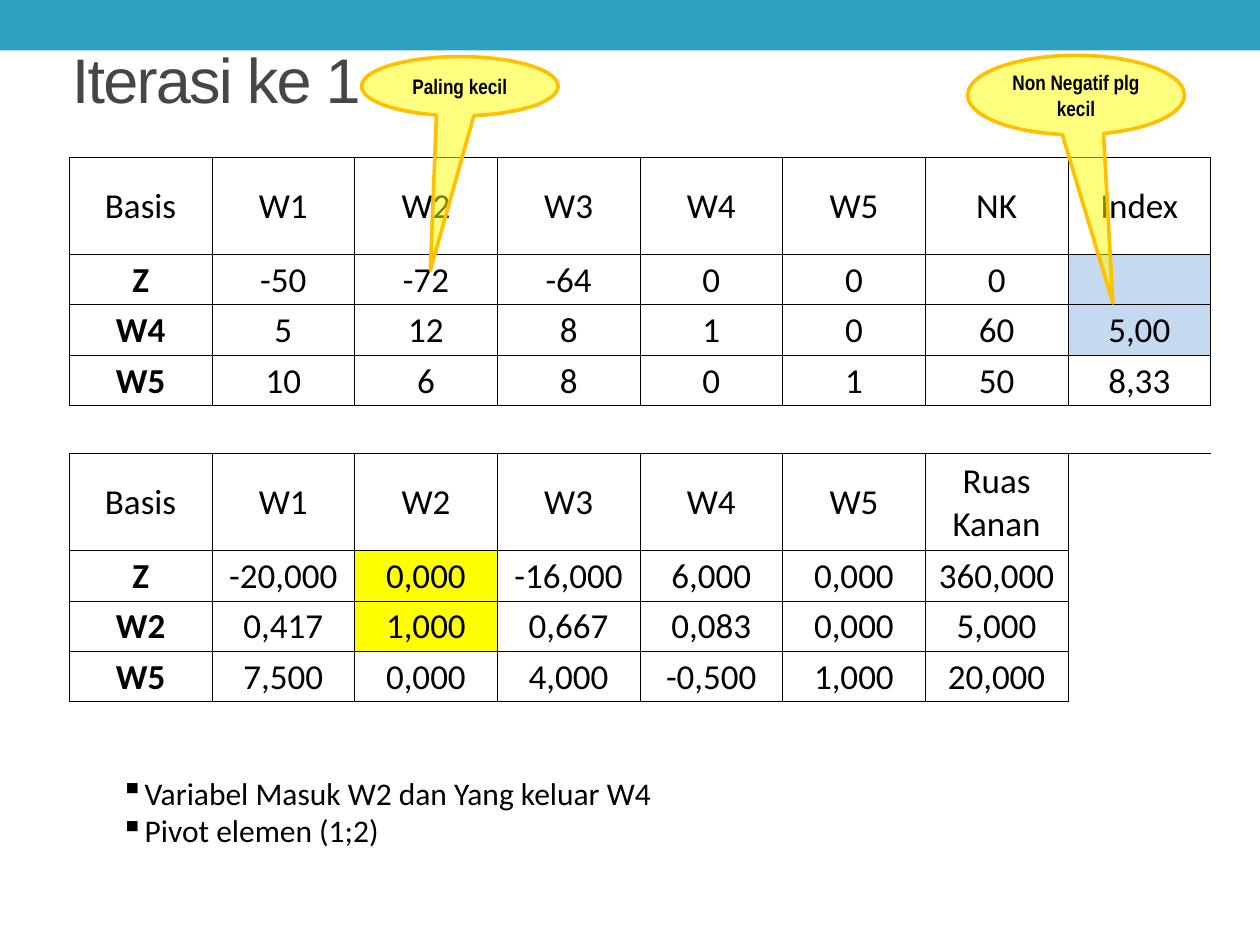
from lxml.etree import SubElement
from pptx import Presentation
from pptx.dml.color import RGBColor
from pptx.enum.shapes import MSO_SHAPE
from pptx.enum.text import MSO_ANCHOR, MSO_AUTO_SIZE, PP_ALIGN
from pptx.oxml.ns import qn
from pptx.util import Inches, Pt

BLACK, BAR, YELLOW, ORANGE, BLUE = "000000", "2DA2BF", "FFFF00", "FFC000", "C5D9F1"
NO_STYLE = "{2D5ABB26-0587-4C30-8999-92F81FD0307C}"
GAP_ROW, INDEX_COL = 4, 7
HEIGHTS = [0.77, 0.4, 0.4, 0.4, 0.38, 0.77, 0.4, 0.4, 0.4]
ROWS = [
    ["Basis", "W1", "W2", "W3", "W4", "W5", "NK", "Index"],
    ["Z", "-50", "-72", "-64", "0", "0", "0", ""],
    ["W4", "5", "12", "8", "1", "0", "60", "5,00"],
    ["W5", "10", "6", "8", "0", "1", "50", "8,33"],
    [""] * 8,
    ["Basis", "W1", "W2", "W3", "W4", "W5", "Ruas Kanan", ""],
    ["Z", "-20,000", "0,000", "-16,000", "6,000", "0,000", "360,000", ""],
    ["W2", "0,417", "1,000", "0,667", "0,083", "0,000", "5,000", ""],
    ["W5", "7,500", "0,000", "4,000", "-0,500", "1,000", "20,000", ""],
]
HIGHLIGHTS = {(1, 7): BLUE, (2, 7): BLUE, (6, 2): YELLOW, (7, 2): YELLOW}
SIDES = {"a:lnL": (0, -1), "a:lnR": (0, 1), "a:lnT": (-1, 0), "a:lnB": (1, 0)}


def rgb(color):
    return RGBColor.from_string(color)


def box(x, y, w, h):
    return Inches(x), Inches(y), Inches(w), Inches(h)


def style_font(font, name, size, color=BLACK, bold=False):
    font.name, font.size, font.bold = name, Pt(size), bold
    font.color.rgb = rgb(color)


def add_bar(s):
    sp = s.shapes.add_shape(MSO_SHAPE.RECTANGLE, *box(0, 0, 10, 0.4))
    sp.shadow.inherit = False
    sp.fill.solid()
    sp.fill.fore_color.rgb = rgb(BAR)
    sp.line.fill.background()


def set_title(s, text):
    sp = s.shapes.title
    sp.left, sp.top, sp.width, sp.height = box(0.47, 0.3, 9.22, 0.64)
    tf = sp.text_frame
    tf.text = text
    tf.vertical_anchor = MSO_ANCHOR.MIDDLE
    p = tf.paragraphs[0]
    p.alignment = PP_ALIGN.LEFT
    r = p.runs[0]
    style_font(r.font, "Arial", 36, "464646")
    r.font._element.set("spc", "-100")


def is_boxed(row, col):
    return row != GAP_ROW and (col < INDEX_COL or row < GAP_ROW)


def set_borders(cell, row, col):
    tc_pr = cell._tc.get_or_add_tcPr()
    lines = []
    for tag, (dr, dc) in SIDES.items():
        if is_boxed(row, col) or is_boxed(row + dr, col + dc):
            ln = SubElement(tc_pr, qn(tag), w=str(Pt(0.5)))
            SubElement(SubElement(ln, qn("a:solidFill")), qn("a:srgbClr"), val=BLACK)
            lines.append(ln)
    for i, ln in enumerate(lines):
        tc_pr.insert(i, ln)


def fill_cell(cell, row, col):
    cell.margin_left = cell.margin_right = cell.margin_top = Inches(0.01)
    cell.margin_bottom = 0
    cell.vertical_anchor = MSO_ANCHOR.MIDDLE
    cell.text = ROWS[row][col]
    p = cell.text_frame.paragraphs[0]
    p.alignment = PP_ALIGN.CENTER
    is_row_label = col == 0 and ROWS[row][0] != "Basis"
    for r in p.runs:
        style_font(r.font, "Calibri", 20, bold=is_row_label)
    if (row, col) in HIGHLIGHTS:
        cell.fill.solid()
        cell.fill.fore_color.rgb = rgb(HIGHLIGHTS[row, col])
    else:
        cell.fill.background()
    set_borders(cell, row, col)


def add_simplex_table(s):
    frame = s.shapes.add_table(len(ROWS), len(ROWS[0]), *box(0.55, 1.25, 9.06, sum(HEIGHTS)))
    table = frame.table
    table.first_row = table.horz_banding = False
    table._tbl.tblPr.find(qn("a:tableStyleId")).text = NO_STYLE
    for row, height in enumerate(HEIGHTS):
        table.rows[row].height = Inches(height)
        for col in range(len(ROWS[row])):
            fill_cell(table.cell(row, col), row, col)


def add_notes(s, lines):
    tf = s.shapes.add_textbox(*box(0.86, 6.09, 8.13, 0.71)).text_frame
    tf.word_wrap = True
    tf.auto_size = MSO_AUTO_SIZE.SHAPE_TO_FIT_TEXT
    tf.text = "\n".join(lines)
    for p in tf.paragraphs:
        p_pr = p._p.get_or_add_pPr()
        p_pr.set("marL", str(Inches(0.19)))
        p_pr.set("indent", str(-Inches(0.19)))
        SubElement(p_pr, qn("a:buChar"), char="▪")
        style_font(p.runs[0].font, "Calibri", 18)


def add_callout(s, text, place, tip):
    sp = s.shapes.add_shape(MSO_SHAPE.OVAL_CALLOUT, *box(*place))
    sp.shadow.inherit = False
    sp.adjustments[0], sp.adjustments[1] = tip
    sp.fill.solid()
    sp.fill.fore_color.rgb = rgb(YELLOW)
    color = sp._element.spPr.find(qn("a:solidFill")).find(qn("a:srgbClr"))
    SubElement(color, qn("a:alpha"), val="50000")
    sp.line.color.rgb = rgb(ORANGE)
    sp.line.width = Pt(2.08)
    tf = sp.text_frame
    tf.text = text
    tf.word_wrap = True
    tf.vertical_anchor = MSO_ANCHOR.MIDDLE
    p = tf.paragraphs[0]
    p.alignment = PP_ALIGN.CENTER
    style_font(p.runs[0].font, "Arial Narrow", 12, bold=True)


def main():
    prs = Presentation()
    prs.slide_width, prs.slide_height = Inches(10), Inches(7.5)
    s = prs.slides.add_slide(prs.slide_layouts[5])
    add_bar(s)
    set_title(s, "Iterasi ke 1")
    add_simplex_table(s)
    add_notes(s, ["Variabel Masuk W2 dan Yang keluar W4", "Pivot elemen (1;2)"])
    add_callout(s, "Non Negatif plg kecil", (7.68, 0.44, 1.72, 0.63), (0.17, 2.62))
    add_callout(s, "Paling kecil", (2.87, 0.45, 1.56, 0.47), (-0.15, 3.11))
    prs.save("out.pptx")


if __name__ == "__main__":
    main()
